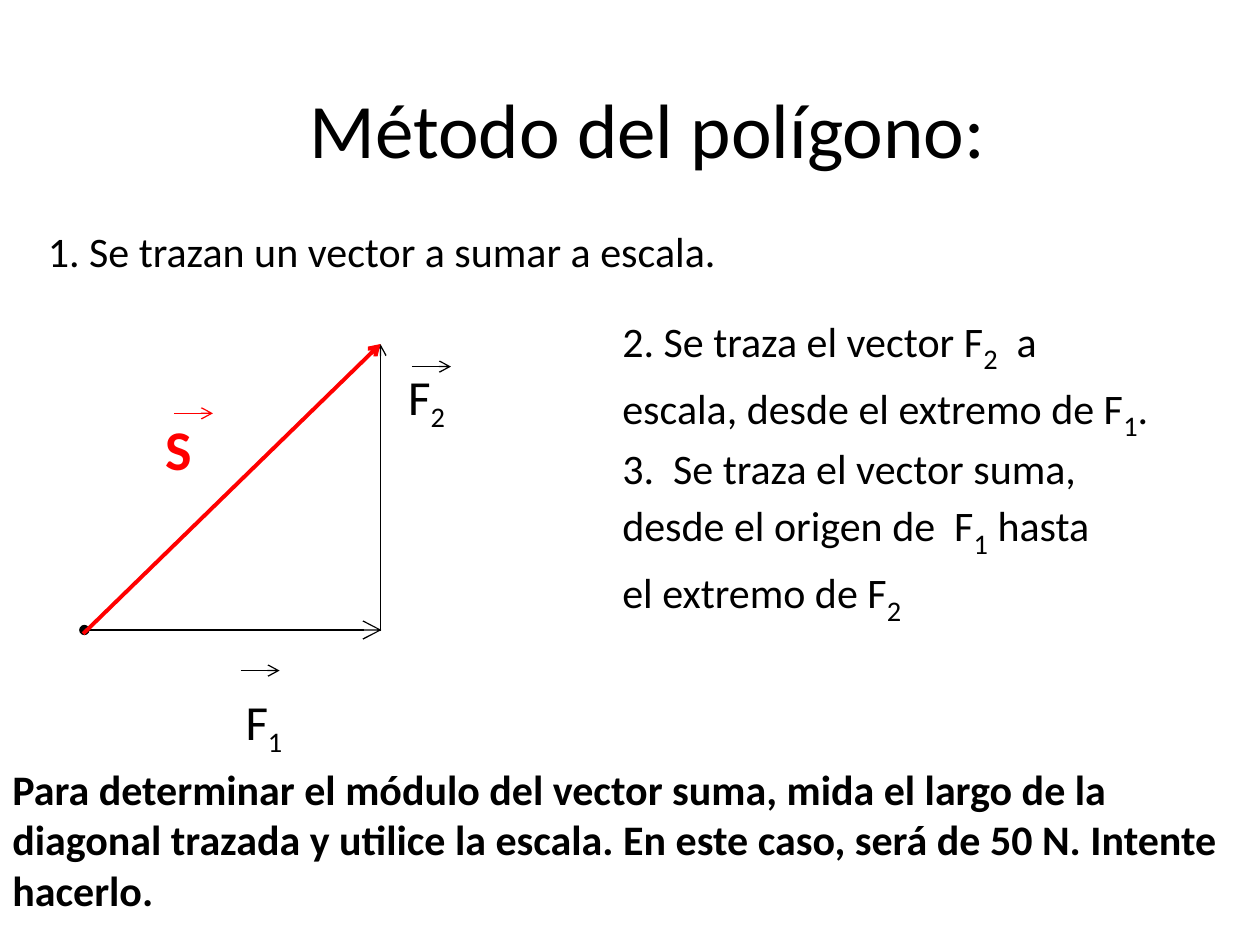
from dataclasses import dataclass

from lxml.etree import SubElement
from pptx import Presentation
from pptx.dml.color import RGBColor
from pptx.enum.shapes import MSO_CONNECTOR
from pptx.enum.text import PP_ALIGN
from pptx.oxml.ns import qn
from pptx.util import Pt

BLACK = RGBColor(0x00, 0x00, 0x00)
RED = RGBColor(0xFF, 0x00, 0x00)
FONT = "Calibri"
SYMBOL_ARROW_LENGTH = 22.3


@dataclass(frozen=True)
class TextRun:
    text: str
    size: float = 24
    subscript: bool = False
    bold: bool = False
    color: RGBColor = BLACK


@dataclass(frozen=True)
class TextParagraph:
    runs: list[TextRun]
    alignment: PP_ALIGN = PP_ALIGN.LEFT
    space_before: float = 0


@dataclass(frozen=True)
class TextBlock:
    left: float
    top: float
    width: float
    height: float
    paragraphs: list[TextParagraph]


@dataclass(frozen=True)
class Vector:
    start: tuple[float, float]
    end: tuple[float, float]
    color: RGBColor = BLACK
    weight: float = 0.75
    head_size: str = "med"
    dot_at_start: bool = False


def subscript(digit: str) -> TextRun:
    return TextRun(digit, 28, subscript=True)


def force_label(left: float, top: float, digit: str) -> TextBlock:
    runs = [TextRun("F", 28), subscript(digit)]
    return TextBlock(left, top, 41.8, 41, [TextParagraph(runs)])


def symbol_arrow(left: float, top: float, color: RGBColor = BLACK) -> Vector:
    return Vector((left, top), (left + SYMBOL_ARROW_LENGTH, top), color)


TEXT_BLOCKS = [
    TextBlock(20.2, 43.2, 699.8, 162.7, [
        TextParagraph([TextRun("Método del polígono:", 44)], PP_ALIGN.CENTER),
        TextParagraph([TextRun("1. Se trazan un vector a sumar a escala.")],
                      space_before=29.3),
    ]),
    force_label(133.2, 391.7, "1"),
    force_label(226.1, 205.9, "2"),
    TextBlock(348.5, 172.8, 318.2, 186.5, [
        TextParagraph([
            TextRun("2. Se traza el vector F"), subscript("2"),
            TextRun("  a escala, desde el extremo de F"), subscript("1"),
            TextRun("."),
        ]),
        TextParagraph([
            TextRun("3.  Se traza el vector suma, desde el origen de  F"),
            subscript("1"), TextRun(" hasta"),
        ]),
        TextParagraph([TextRun("el extremo de F"), subscript("2")]),
    ]),
    TextBlock(0, 432.7, 703, 94.3, [
        TextParagraph([TextRun(
            "Para determinar el módulo del vector suma, mida el largo de la "
            "diagonal trazada y utilice la escala. En este caso, será de 50 N. "
            "Intente hacerlo.", bold=True)]),
    ]),
    TextBlock(87.8, 233.3, 33.8, 46.1, [
        TextParagraph([TextRun("S", 32, bold=True, color=RED)]),
    ]),
]

VECTORS = [
    Vector((48.2, 360), (218, 360), head_size="lg", dot_at_start=True),
    Vector((217.4, 360.7), (217.4, 196.6)),
    Vector((47.5, 362.2), (217.4, 196.6), RED, 2.25),
    symbol_arrow(137.5, 383.2),
    symbol_arrow(235.4, 209.5),
    symbol_arrow(99.4, 236.2, RED),
]


def draw_text(slide, block: TextBlock) -> None:
    shape = slide.shapes.add_textbox(
        Pt(block.left), Pt(block.top), Pt(block.width), Pt(block.height))
    frame = shape.text_frame
    frame.word_wrap = True
    for index, content in enumerate(block.paragraphs):
        paragraph = frame.add_paragraph() if index else frame.paragraphs[0]
        paragraph.alignment = content.alignment
        paragraph.space_before = Pt(content.space_before)
        for text_run in content.runs:
            run = paragraph.add_run()
            run.text = text_run.text
            run.font.name = FONT
            run.font.size = Pt(text_run.size)
            run.font.bold = text_run.bold
            run.font.color.rgb = text_run.color
            if text_run.subscript:
                run.font._element.set("baseline", "-25000")


def draw_vector(slide, vector: Vector) -> None:
    connector = slide.shapes.add_connector(
        MSO_CONNECTOR.STRAIGHT,
        *(Pt(length) for length in vector.start + vector.end))
    connector.line.color.rgb = vector.color
    connector.line.width = Pt(vector.weight)
    line = connector.line._get_or_add_ln()
    if vector.dot_at_start:
        SubElement(line, qn("a:headEnd"), type="oval")
    SubElement(line, qn("a:tailEnd"), type="arrow",
               w=vector.head_size, len=vector.head_size)
    SubElement(connector._element.spPr, qn("a:effectLst"))


def main() -> None:
    presentation = Presentation()
    presentation.slide_width = Pt(720)
    presentation.slide_height = Pt(540)
    slide = presentation.slides.add_slide(presentation.slide_layouts[6])
    for block in TEXT_BLOCKS:
        draw_text(slide, block)
    for vector in VECTORS:
        draw_vector(slide, vector)
    presentation.save("out.pptx")


if __name__ == "__main__":
    main()
